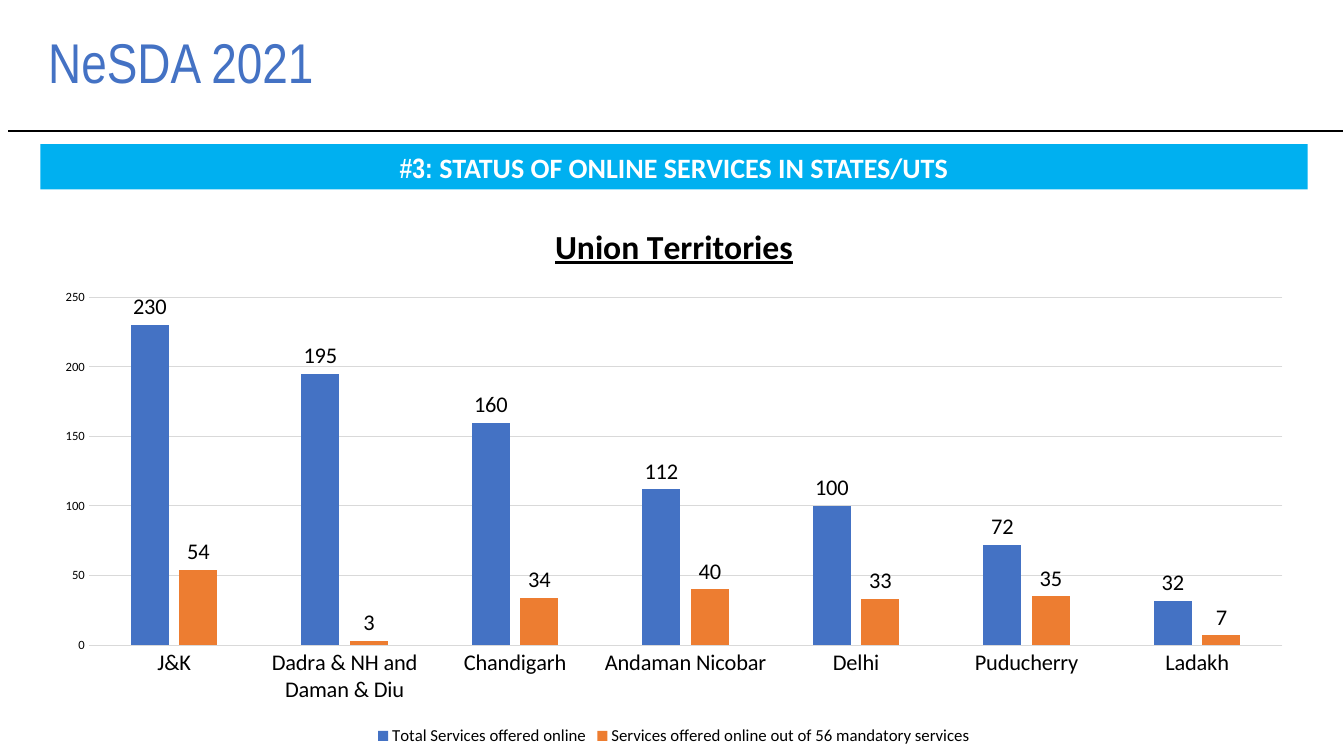
from lxml import etree
from pptx import Presentation
from pptx.chart.data import CategoryChartData
from pptx.dml.color import RGBColor
from pptx.enum.chart import XL_CHART_TYPE as ChartType, XL_LABEL_POSITION as LabelPos
from pptx.enum.chart import XL_LEGEND_POSITION as LegendPos, XL_TICK_MARK as Tick
from pptx.enum.shapes import MSO_CONNECTOR as Connector, MSO_SHAPE as Shape
from pptx.enum.text import MSO_ANCHOR as Anchor, PP_ALIGN as Align
from pptx.oxml.ns import qn
from pptx.util import Inches, Pt

# Content
TITLE = "NeSDA 2021"
BANNER = [("#3: ", "Arial Narrow"), ("STATUS OF ONLINE SERVICES IN STATES/UTS", "Calibri")]
CHART_TITLE = "Union Territories"
TERRITORIES = ["J&K", "Dadra & NH and Daman & Diu", "Chandigarh", "Andaman Nicobar",
               "Delhi", "Puducherry", "Ladakh"]
SERIES = [
    ("Total Services offered online", "4472C4", (230, 195, 160, 112, 100, 72, 32)),
    ("Services offered online out of 56 mandatory services", "ED7D31",
     (54, 3, 34, 40, 33, 35, 7)),
]
BLACK, WHITE, BLUE, CYAN, GREY = "000000", "FFFFFF", "4472C4", "00B0F0", "D9D9D9"
LEFT, WIDTH = 0.4, 12.57


def rgb(value):
    return RGBColor.from_string(value)


def style_font(font, size, color=BLACK, name="Calibri", bold=False):
    font.size, font.name, font.bold = Pt(size), name, bold
    font.color.rgb = rgb(color)


def style_line(line, color, width):
    line.color.rgb = rgb(color)
    line.width = Pt(width)


def add_span(para, text, *style):
    span = para.add_run()
    span.text = text
    style_font(span.font, *style)
    return span


deck = Presentation()
deck.slide_width, deck.slide_height = Inches(13.33), Inches(7.5)
page = deck.slides.add_slide(deck.slide_layouts[6])

# Title and rule
box = page.shapes.add_textbox(Inches(0.38), Inches(0.06), Inches(12.76), Inches(1.17))
box.text_frame.word_wrap = True
box.text_frame.vertical_anchor = Anchor.MIDDLE
para = box.text_frame.paragraphs[0]
para.line_spacing = 0.9
add_span(para, TITLE, 40, BLUE, "Arial Narrow")

rule = page.shapes.add_connector(Connector.STRAIGHT, Inches(0.08), Inches(1.3),
                                 Inches(13.32), Inches(1.3))
style_line(rule.line, BLACK, 1)
etree.SubElement(rule._element.spPr, qn("a:effectLst"))

# Banner
banner = page.shapes.add_shape(Shape.RECTANGLE, Inches(LEFT), Inches(1.43),
                               Inches(WIDTH), Inches(0.45))
banner.shadow.inherit = False
banner.fill.solid()
banner.fill.fore_color.rgb = rgb(CYAN)
banner.line.fill.background()
banner.text_frame.word_wrap = True
banner.text_frame.vertical_anchor = Anchor.MIDDLE
para = banner.text_frame.paragraphs[0]
para.alignment = Align.CENTER
for text, face in BANNER:
    add_span(para, text, 20, WHITE, face, True)

# Chart
data = CategoryChartData()
data.categories = TERRITORIES
for name, color, values in SERIES:
    data.add_series(name, values)
chart = page.shapes.add_chart(ChartType.COLUMN_CLUSTERED, Inches(LEFT), Inches(2),
                              Inches(WIDTH), Inches(5.44), data).chart
style_font(chart.font, 10)
chart.has_title = True
span = add_span(chart.chart_title.text_frame.paragraphs[0], CHART_TITLE,
                24, BLACK, "Calibri", True)
span.font.underline = True
chart.chart_title.include_in_layout = False

chart.has_legend = True
chart.legend.position = LegendPos.BOTTOM
chart.legend.include_in_layout = False
style_font(chart.legend.font, 12)

# Axes
for axis, size in ((chart.category_axis, 16), (chart.value_axis, 9)):
    axis.major_tick_mark = axis.minor_tick_mark = Tick.NONE
    style_font(axis.tick_labels.font, size)
style_line(chart.category_axis.format.line, GREY, 0.75)
chart.value_axis.format.line.fill.background()
style_line(chart.value_axis.major_gridlines.format.line, GREY, 0.75)
chart.value_axis.minimum_scale, chart.value_axis.maximum_scale = 0, 250
chart.value_axis.major_unit = 50

# Columns and their values
plot = chart.plots[0]
plot.gap_width, plot.overlap = 219, -27
plot.vary_by_categories = False
for series, (name, color, values) in zip(plot.series, SERIES):
    series.format.fill.solid()
    series.format.fill.fore_color.rgb = rgb(color)
    labels = series.data_labels
    labels.show_value = True
    labels.position = LabelPos.OUTSIDE_END
    style_font(labels.font, 16)

deck.save("out.pptx")
